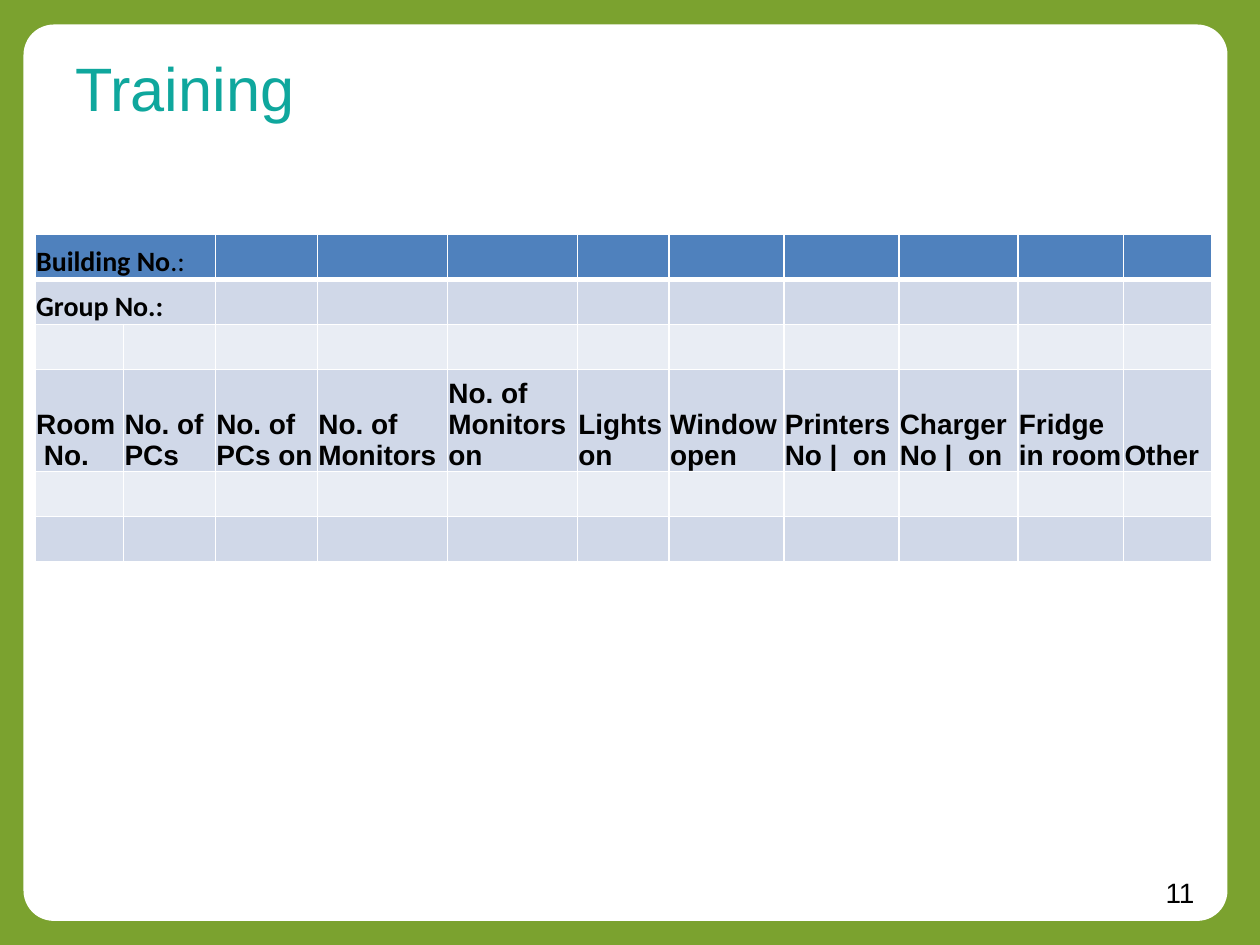
from lxml.etree import SubElement
from pptx import Presentation
from pptx.dml.color import RGBColor
from pptx.enum.shapes import MSO_SHAPE as Preset
from pptx.enum.text import MSO_ANCHOR as Anchor, PP_ALIGN as Align
from pptx.oxml.ns import qn
from pptx.util import Cm, Pt

COLORS = {
    "frame": "7BA22F",
    "panel": "FFFFFF",
    "title": "0FA79D",
    "text": "000000",
    "header": "4F81BD",
    "band": "D0D8E8",
    "light": "E9EDF4",
    "grid": "FFFFFF",
}
TITLE = {"name": "Arial", "size": Pt(35)}
NUMBER = {"name": "Arial", "size": Pt(16)}
LABEL = {"name": "Calibri", "size": Pt(16), "bold": True}
LABEL_PLAIN = LABEL | {"bold": False}
HEADING = {"name": "Arial", "size": Pt(16), "bold": True}
CELL = {
    "vertical_anchor": Anchor.BOTTOM,
    "margin_left": Cm(0.02),
    "margin_right": Cm(0.02),
    "margin_top": Cm(0.02),
    "margin_bottom": Cm(0),
}

WIDTHS = [1.78, 1.85, 2.06, 2.62, 2.62, 1.85, 2.31, 2.32, 2.4, 2.13, 1.78]
HEIGHTS = [0.91, 0.91, 0.91, 1.83, 0.91, 0.91]
ROW_COLORS = ["header", "band", "light", "band", "light", "band"]
HEADINGS = [
    "Room  No.", "No. of PCs", "No. of PCs on", "No. of Monitors",
    "No. of Monitors on", "Lights on", "Window open", "Printers No |  on",
    "Charger No |  on", "Fridge in room", "Other",
]
HEADING_ROW = 3


def rgb(key):
    return RGBColor.from_string(COLORS[key])


def apply(target, values):
    for name, value in values.items():
        setattr(target, name, value)


def fill(target, key):
    target.fill.solid()
    target.fill.fore_color.rgb = rgb(key)


def add_run(paragraph, text, style, color="text"):
    run = paragraph.add_run()
    run.text = text
    apply(run.font, style)
    run.font.color.rgb = rgb(color)


def add_panel(slide):
    panel = slide.shapes.add_shape(
        Preset.ROUNDED_RECTANGLE, Cm(0.51), Cm(0.53), Cm(24.2), Cm(18))
    panel.adjustments[0] = 0.032
    panel.shadow.inherit = False
    fill(panel, "panel")
    panel.line.color.rgb = rgb("panel")
    panel.line.width = Pt(2)


def add_text(slide, box, text, style, color="text", align=Align.LEFT, top=0.13):
    frame = slide.shapes.add_textbox(*map(Cm, box)).text_frame
    apply(frame, {"word_wrap": True, "margin_top": Cm(top)})
    paragraph = frame.paragraphs[0]
    paragraph.alignment = align
    add_run(paragraph, text, style, color)


def set_borders(cell, widths):
    properties = cell._tc.get_or_add_tcPr()
    for side, width in widths.items():
        line = SubElement(properties, qn(f"a:ln{side}"), w=str(Pt(width)))
        solid = SubElement(line, qn("a:solidFill"))
        SubElement(solid, qn("a:srgbClr"), val=COLORS["grid"])


def add_survey(slide):
    survey = slide.shapes.add_table(
        len(HEIGHTS), len(WIDTHS), Cm(0.71), Cm(4.72),
        Cm(sum(WIDTHS)), Cm(sum(HEIGHTS))).table
    apply(survey, {"first_row": False, "horz_banding": False})
    for column, width in zip(survey.columns, WIDTHS):
        column.width = Cm(width)
    for index, (row, height) in enumerate(zip(survey.rows, HEIGHTS)):
        row.height = Cm(height)
        borders = {"L": 1, "R": 1,
                   "T": 3 if index == 1 else 1,
                   "B": 3 if index == 0 else 1}
        for cell in row.cells:
            apply(cell, CELL)
            set_borders(cell, borders)
            fill(cell, ROW_COLORS[index])

    labels = [
        [("Building No", LABEL), (".:", LABEL_PLAIN)],
        [("Group No.:", LABEL)],
    ]
    for index, runs in enumerate(labels):
        label = survey.cell(index, 0)
        label.merge(survey.cell(index, 1))
        for text, style in runs:
            add_run(label.text_frame.paragraphs[0], text, style)
    for cell, heading in zip(survey.rows[HEADING_ROW].cells, HEADINGS):
        add_run(cell.text_frame.paragraphs[0], heading, HEADING)


def main():
    deck = Presentation()
    apply(deck, {"slide_width": Cm(25.4), "slide_height": Cm(19.05)})
    slide = deck.slides.add_slide(deck.slide_layouts[6])
    fill(slide.background, "frame")
    add_panel(slide)
    add_text(slide, (18.54, 17.53, 5.79, 0.94), "11", NUMBER, align=Align.RIGHT)
    add_text(slide, (1.27, 0.76, 17.27, 2.57), "Training", TITLE, "title", top=0.25)
    add_survey(slide)
    deck.save("out.pptx")


if __name__ == "__main__":
    main()
